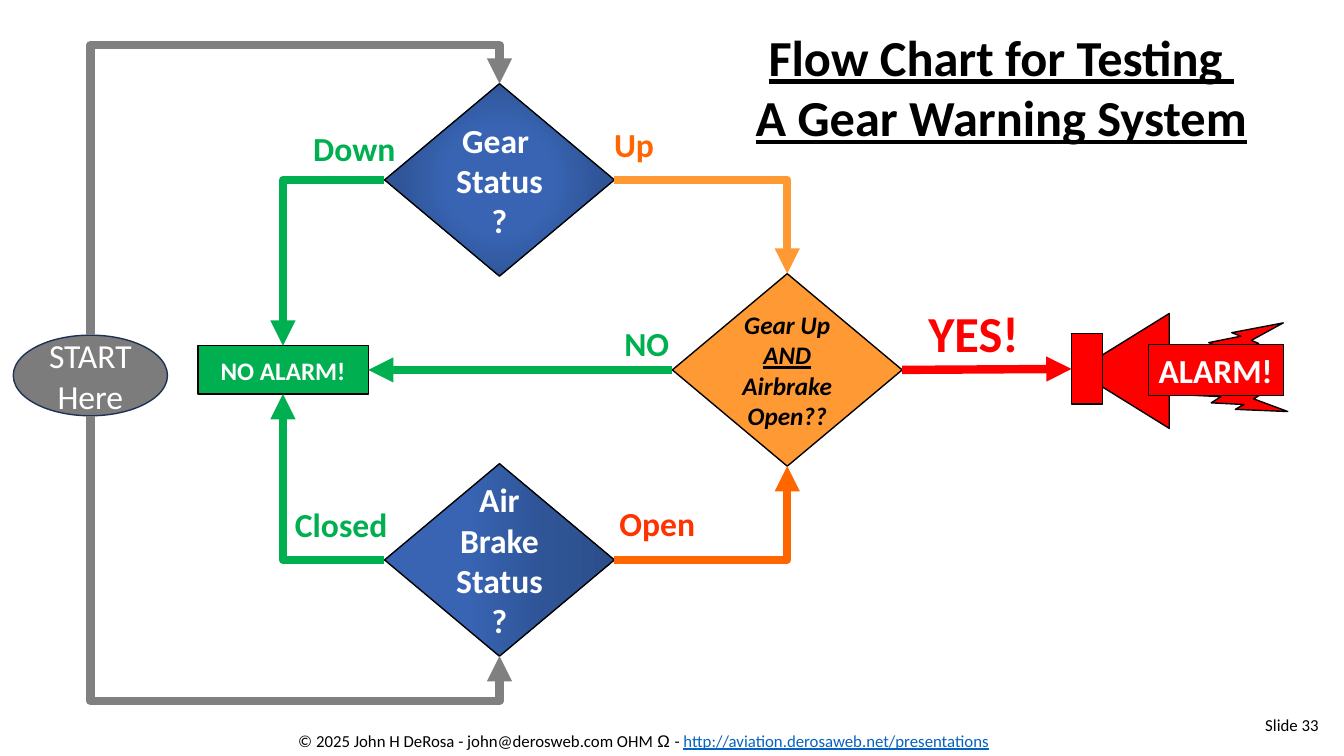
from lxml.etree import SubElement
from pptx import Presentation
from pptx.dml.color import RGBColor
from pptx.enum.shapes import MSO_CONNECTOR as Connector, MSO_SHAPE as Shape
from pptx.enum.text import MSO_ANCHOR as Anchor, MSO_AUTO_SIZE as AutoSize, PP_ALIGN as Align
from pptx.oxml.ns import qn
from pptx.util import Inches, Pt


class Theme:
    font, symbol_font = "Calibri", "Arial"
    black, white, link = "000000", "FFFFFF", "0563C1"
    green, red, gray, start, start_edge = "00B050", "FF0000", "808080", "7C7C7C", "1E3256"
    amber, orange, open_red = "FF9933", "FF6600", "FF3300"
    blues = [(0, "3864B3"), (35, "3864B3"), (69, "2F5597"), (97, "2C4F8C")]
    headline, body, detail, small = 36, 24, 18, 12
    edge, route = 1, 6


# Grid: every cell is a tenth of an inch
CELL = Inches(0.1)
COLUMNS, ROWS = 133.33, 75
STATUS_COLUMN, DECISION_COLUMN, CLEAR_COLUMN, START_COLUMN = 49.55, 78.1, 28.08, 8.97
MIDDLE_ROW, ROW_STEP = 36.7, 18.85
DIAMOND = (22.8, 19.1)

presentation = Presentation()
presentation.slide_width = int(COLUMNS * CELL)
presentation.slide_height = ROWS * CELL
slide = presentation.slides.add_slide(presentation.slide_layouts[6])


def write(paragraphs, frame, kind=None, fill=None, edge=Theme.edge, edge_color=Theme.black,
          size=Theme.body, color=Theme.white, bold=True, italic=False, underline=False,
          align=Align.CENTER, wrap=True, grow=False, rotation=0):
    """Place a shape, or a text box when kind is None; a run is (text, overrides)."""
    box = [int(cells * CELL) for cells in frame]
    if kind is None:
        shape = slide.shapes.add_textbox(*box)
    else:
        shape = slide.shapes.add_shape(kind, *box)
        shape.shadow.inherit = False
        shape.rotation = rotation
        shape.fill.solid()
        shape.fill.fore_color.rgb = RGBColor.from_string(fill)
        shape.line.color.rgb = RGBColor.from_string(edge_color)
        shape.line.width = Pt(edge)
    text_frame = shape.text_frame
    text_frame.word_wrap = wrap
    text_frame.vertical_anchor = Anchor.TOP if kind is None else Anchor.MIDDLE
    if grow:
        text_frame.auto_size = AutoSize.SHAPE_TO_FIT_TEXT
    for index, runs in enumerate(paragraphs):
        paragraph = text_frame.add_paragraph() if index else text_frame.paragraphs[0]
        paragraph.alignment = align
        for text, changes in [(runs, {})] if isinstance(runs, str) else runs:
            run = paragraph.add_run()
            run.text = text
            run.font.size = Pt(size)
            run.font.bold, run.font.italic = bold, italic
            run.font.name = changes.get("font", Theme.font)
            run.font.underline = changes.get("underline", underline)
            run.font.color.rgb = RGBColor.from_string(changes.get("color", color))
    return shape


def centered(column, row, width, height):
    return column - width / 2, row - height / 2, width, height


# Footer, slide number and title
write([[("© 2025 John H DeRosa - john@derosweb.com OHM ", {}),
        ("Ω ", {"font": Theme.symbol_font}), ("- ", {}),
        ("http://aviation.derosaweb.net/presentations", {"color": Theme.link, "underline": True}),
        (" ", {})]],
      (24.2, 72, 79.7, 3), size=Theme.small, color=Theme.black, bold=False, grow=True)
write(["Slide 33"], (116.6, 70.4, 15.2, 4), size=Theme.small, color=Theme.black,
      bold=False, align=Align.RIGHT)
write(["Flow Chart for Testing ", "A Gear Warning System"], (56.7, 2.1, 85.3, 13.1),
      size=Theme.headline, color=Theme.black, underline=True, grow=True)

# Status diamonds with shaded blue fill
gear = write(["Gear ", "Status?"],
             centered(STATUS_COLUMN, MIDDLE_ROW - ROW_STEP, *DIAMOND), Shape.DIAMOND, Theme.blues[0][1])
brake = write(["Air Brake Status?"],
              centered(STATUS_COLUMN, MIDDLE_ROW + ROW_STEP, *DIAMOND), Shape.DIAMOND, Theme.blues[0][1])
for status, radial in [(gear, True), (brake, False)]:
    properties = status.element.spPr
    gradient = properties.makeelement(qn("a:gradFill"), {"rotWithShape": "1"})
    stops = SubElement(gradient, qn("a:gsLst"))
    for position, color in Theme.blues:
        stop = SubElement(stops, qn("a:gs"), pos=str(position * 1000))
        SubElement(stop, qn("a:srgbClr"), val=color)
    if radial:
        shade = SubElement(gradient, qn("a:path"), {"path": "circle"})
        SubElement(shade, qn("a:fillToRect"), {side: "50000" for side in "ltrb"})
    else:
        SubElement(gradient, qn("a:lin"), ang="0", scaled="0")
    properties.replace(properties.find(qn("a:solidFill")), gradient)

# Decision, outcome and start
decision = write([[("Gear Up ", {}), ("AND", {"underline": True}), (" Airbrake Open??", {})]],
                 centered(DECISION_COLUMN, MIDDLE_ROW, *DIAMOND), Shape.DIAMOND, Theme.amber,
                 size=Theme.detail, color=Theme.black, italic=True)
no_alarm = write(["NO ALARM!"], centered(CLEAR_COLUMN, MIDDLE_ROW, 16.9, 4.8),
                 Shape.RECTANGLE, Theme.green, size=Theme.detail)
start = write(["START", "Here"], centered(START_COLUMN, 37.25, 15.3, 8), Shape.OVAL,
              Theme.start, edge_color=Theme.start_edge, bold=False)

# Alarm horn
write([], (105.7, 32.2, 11.4, 9.2), Shape.ISOSCELES_TRIANGLE, Theme.red, rotation=270)
horn = write([], (106.3, 33.1, 3.1, 7), Shape.RECTANGLE, Theme.red)
upper_bolt = write([], (117.8, 31.4, 9.2, 5.3), Shape.LIGHTNING_BOLT, Theme.red, rotation=7.6)
upper_bolt.element.spPr.xfrm.set("flipV", "1")
write([], (118, 36.9, 9.2, 5.3), Shape.LIGHTNING_BOLT, Theme.red, rotation=344)
write(["ALARM!"], (113.9, 34.2, 13.4, 5), Shape.RECTANGLE, Theme.red, edge=0.75,
      wrap=False, grow=True)

# Branch labels
for label, frame, color in [
    ("Open", (60.4, 49.4, 9.6, 5), Theme.open_red),
    ("Closed", (28.2, 49.5, 11.3, 5), Theme.green),
    ("Down", (30, 12.2, 10.3, 5), Theme.green),
    ("Up", (59.9, 11.8, 6, 5), Theme.orange),
    ("NO", (60.9, 31.5, 6.5, 5), Theme.green),
]:
    write([label], frame, color=color, wrap=False, grow=True)
write(["YES! "], (89, 29.5, 16.3, 7.1), size=Theme.headline, color=Theme.red, grow=True)

# Routes between shapes; a loop is how far the route swings past its end, in cells
TOP, LEFT, BOTTOM, RIGHT = range(4)
OVAL_BOTTOM = "4"
for origin, origin_side, target, target_side, color, bend, loop in [
    (decision, LEFT, no_alarm, RIGHT, Theme.green, None, 0),
    (decision, RIGHT, horn, LEFT, Theme.red, None, 0),
    (gear, RIGHT, decision, TOP, Theme.amber, "bentConnector2", 0),
    (brake, RIGHT, decision, BOTTOM, Theme.orange, "bentConnector2", 0),
    (brake, LEFT, no_alarm, BOTTOM, Theme.green, "bentConnector2", 0),
    (gear, LEFT, no_alarm, TOP, Theme.green, "bentConnector2", 0),
    (start, TOP, gear, TOP, Theme.gray, "bentConnector3", 3.85),
    (start, BOTTOM, brake, BOTTOM, Theme.gray, "bentConnector3", 4.45),
]:
    route = slide.shapes.add_connector(Connector.ELBOW if bend else Connector.STRAIGHT, 0, 0, 0, 0)
    route.begin_connect(origin, origin_side)
    route.end_connect(target, target_side)
    route.line.color.rgb = RGBColor.from_string(color)
    route.line.width = Pt(Theme.route)
    properties = route.element.spPr
    SubElement(properties.find(qn("a:ln")), qn("a:tailEnd"), type="triangle")
    SubElement(properties, qn("a:effectLst"))
    geometry = properties.find(qn("a:prstGeom"))
    if bend:
        geometry.set("prst", bend)
    if loop:
        # Turn the frame so that the route leaves vertically
        upward = origin_side == TOP
        across, along = route.width, route.height
        route.left += (across - along) // 2
        route.top += (along - across) // 2
        route.width, route.height = along, across
        properties.xfrm.set("rot", str((90 if upward else 270) * 60000))
        properties.xfrm.set("flipH", "1")
        properties.xfrm.set("flipV", "1" if upward else "0")
        share = 1 + loop * CELL / along
        SubElement(geometry.find(qn("a:avLst")), qn("a:gd"), name="adj1",
                   fmla=f"val {round(share * 100000)}")
        if not upward:
            next(route.element.iter(qn("a:stCxn"))).set("idx", OVAL_BOTTOM)

presentation.save("out.pptx")
